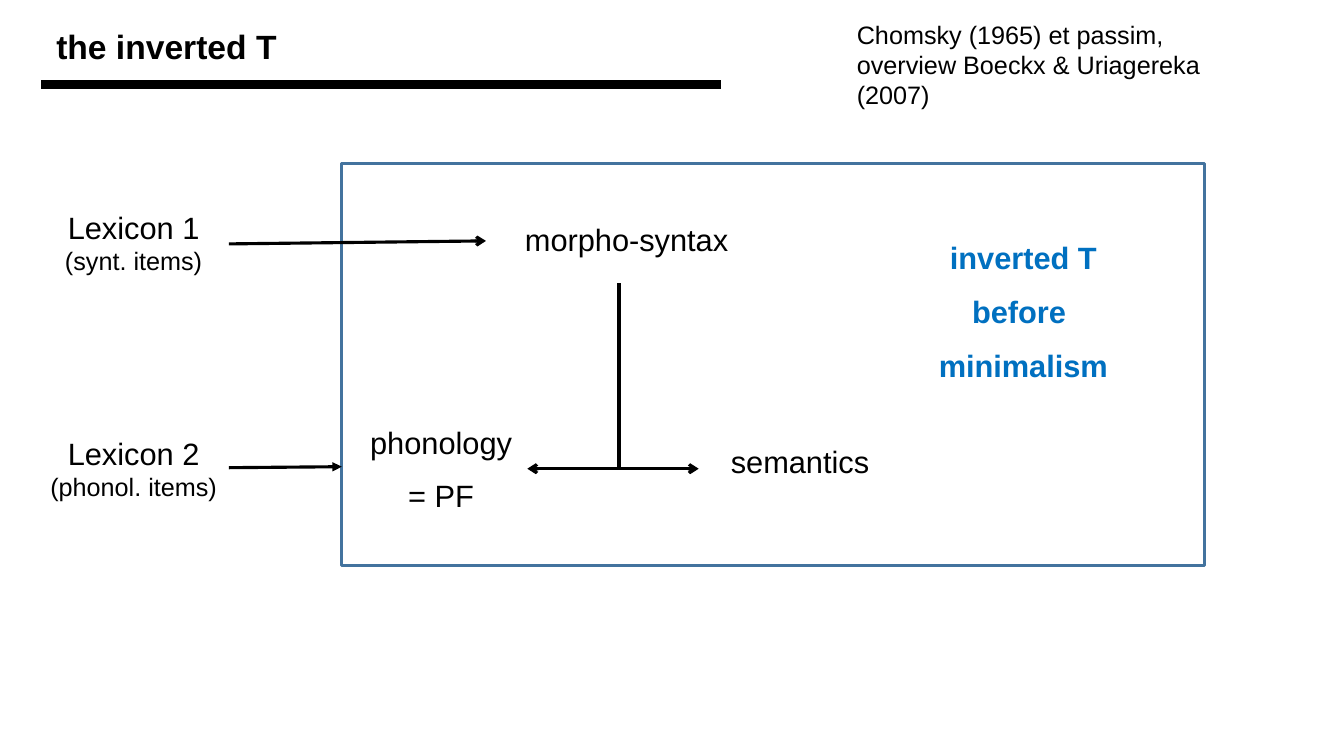
from pptx import Presentation
from pptx.dml.color import RGBColor
from pptx.enum.shapes import MSO_CONNECTOR, MSO_SHAPE
from pptx.enum.text import PP_ALIGN
from pptx.oxml.ns import qn
from pptx.util import Pt
from lxml.etree import SubElement

PX = 9144
BLACK = RGBColor(0x00, 0x00, 0x00)
BLUE = RGBColor(0x00, 0x70, 0xC0)
FRAME_BLUE = RGBColor(0x43, 0x73, 0x9E)
FONT = "Arial"


def add_text(s, box, lines, sizes=(22,), color=BLACK, bold=False,
             align=PP_ALIGN.CENTER, gap=12):
    """Add a text box with one paragraph per line; the last size carries on."""
    tf = s.shapes.add_textbox(*(v * PX for v in box)).text_frame
    tf.word_wrap = True
    tf.text = "\n".join(lines)
    for i, p in enumerate(tf.paragraphs):
        p.alignment = align
        p.space_before = Pt(gap if i else 0)
        for r in p.runs:
            r.font.name = FONT
            r.font.size = Pt(sizes[min(i, len(sizes) - 1)])
            r.font.bold = bold
            r.font.color.rgb = color


def add_line(s, start, end, width=2.25, head=None, tail=None):
    """Add a straight black line with optional arrowheads."""
    ends = (v * PX for v in (*start, *end))
    c = s.shapes.add_connector(MSO_CONNECTOR.STRAIGHT, *ends)
    c.line.color.rgb = BLACK
    c.line.width = Pt(width)
    ln = c.line._get_or_add_ln()
    for tag, kind in (("a:headEnd", head), ("a:tailEnd", tail)):
        if kind:
            SubElement(ln, qn(tag), type=kind)
    SubElement(c._element.spPr, qn("a:effectLst"))


def add_header(s, x, y):
    """Place the ruled title and the reference beside it."""
    add_text(s, (x + 5, y, 835, 50), ["the inverted T"], (24,),
             bold=True, align=PP_ALIGN.LEFT)
    add_line(s, (x, y + 63), (x + 674, y + 63), width=6)
    add_text(s, (x + 799, y - 7, 417, 101),
             ["Chomsky (1965) et passim, overview Boeckx & Uriagereka (2007)"],
             (18,), align=PP_ALIGN.LEFT)


def add_lexicon(s, x, y, lines, arrow_y, target, tail):
    """Place a lexicon label and the arrow leading from it to its target."""
    add_text(s, (x, y, 201, 77), lines, (22, 18), gap=0)
    add_line(s, (x + 195, y + arrow_y), target, tail=tail)


def add_grammar(s, x, y, w, h):
    """Place the frame with the inverted T and its caption."""
    sp = s.shapes.add_shape(MSO_SHAPE.RECTANGLE, *(v * PX for v in (x, y, w, h)))
    sp.shadow.inherit = False
    sp.fill.background()
    sp.line.color.rgb = FRAME_BLUE
    sp.line.width = Pt(2)
    add_text(s, (x + 538, y + 70, 276, 125),
             ["inverted T", "before ", "minimalism"], color=BLUE, bold=True)

    stem_x, bar_y = x + 275, y + 303
    add_text(s, (x - 13, y + 52, 591, 47), ["morpho-syntax"])
    add_line(s, (stem_x, y + 119), (stem_x, bar_y))
    add_line(s, (x + 184, bar_y), (x + 354, bar_y), head="arrow", tail="arrow")
    add_text(s, (x - 2, y + 253, 201, 103), ["phonology", "= PF"])
    add_text(s, (x + 354, y + 272, 201, 47), ["semantics"])


def main():
    """Build the slide and save it."""
    prs = Presentation()
    prs.slide_width, prs.slide_height = 1333 * PX, 750 * PX
    s = prs.slides.add_slide(prs.slide_layouts[6])
    add_header(s, 41, 21)
    add_grammar(s, 339, 162, 856, 399)
    add_lexicon(s, 32, 202, ["Lexicon 1", "(synt. items)"], 40, (482, 239), "arrow")
    add_lexicon(s, 32, 426, ["Lexicon 2", "(phonol. items)"], 38, (339, 463), "triangle")
    prs.save("out.pptx")


if __name__ == "__main__":
    main()
